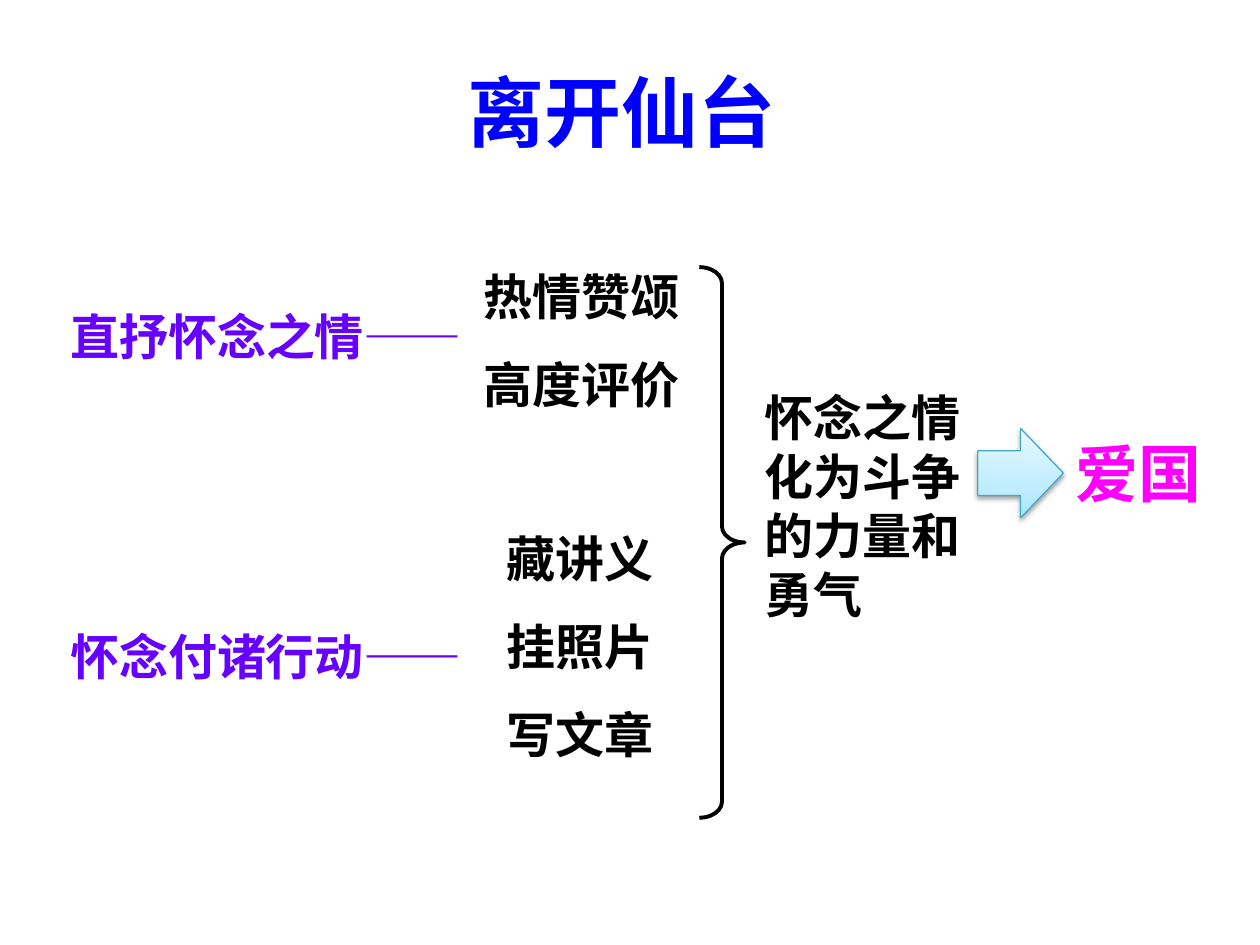
from lxml import etree
from pptx import Presentation
from pptx.dml.color import RGBColor
from pptx.enum.shapes import MSO_SHAPE
from pptx.enum.text import MSO_ANCHOR, PP_ALIGN
from pptx.oxml.ns import qn
from pptx.util import Inches, Pt

BRACE, ARROW = MSO_SHAPE.LEFT_BRACE, MSO_SHAPE.RIGHT_ARROW
TOP = MSO_ANCHOR.TOP
LEFT, CENTER = PP_ALIGN.LEFT, PP_ALIGN.CENTER

THEME = {
    "latin": "Arial", "cjk": "Noto Sans CJK SC",
    "title": {"size": 44, "color": "0000FF"},
    "label": {"size": 28, "color": "6600FF"},
    "body": {"size": 28, "color": "000000"},
    "result": {"size": 36, "color": "FF00FF"},
    "arrow_line": "46AAC5",
    "arrow_stops": [(0, "A7E6FF"), (35, "C1EDFF"), (100, "E7F8FF")],
}

TITLE = ("离开仙台", (2.19, 0.46, 5.49, 0.84))
DASH = "——"
LABELS = [  # text, bold dash, box
    ("直抒怀念之情", False, (0.46, 2.38, 3.38, 0.57)),
    ("怀念付诸行动", True, (0.46, 4.92, 3.46, 0.57)),
]
DETAILS = [
    (["热情赞颂", "高度评价"], (3.74, 1.83, 1.9, 1.51)),
    (["藏讲义", "挂照片", "写文章"], (3.92, 3.91, 1.81, 2.22)),
]
SUMMARY = ("怀念之情化为斗争的力量和勇气", (5.97, 3.03, 1.8, 1.99))
RESULT = ("爱国", (8.44, 3.4, 1.51, 0.71))
BRACE_BOX = (5.55, 2.12, 0.36, 4.37)
ARROW_BOX = (7.76, 3.4, 0.68, 0.71)


def inches(box):
    return [Inches(v) for v in box]


def add_run(p, text, style, bold=True, latin=THEME["latin"]):
    r = p.add_run()
    r.text = text
    for name, value in {"size": Pt(style["size"]), "bold": bold, "name": latin}.items():
        setattr(r.font, name, value)
    r.font.color.rgb = RGBColor.from_string(style["color"])
    latin_el = r.font._element.find(qn("a:latin"))
    ea = etree.Element(qn("a:ea"), typeface=THEME["cjk"])
    latin_el.addnext(ea)


def write(sp, lines, style, align=LEFT, spacing=1.0):
    tf = sp.text_frame
    tf.word_wrap = True
    tf.vertical_anchor = TOP
    for i, line in enumerate(lines):
        p = tf.paragraphs[0] if i == 0 else tf.add_paragraph()
        p.alignment, p.line_spacing = align, spacing
        add_run(p, line, style)
    return tf


def add_text(s, lines, box, style, **layout):
    return write(s.shapes.add_textbox(*inches(box)), lines, style, **layout)


def add_outline(s, kind, box, color, width):
    sp = s.shapes.add_shape(kind, *inches(box))
    sp.shadow.inherit = False
    sp.line.color.rgb = RGBColor.from_string(color)
    sp.line.width = Pt(width)
    return sp


def add_color(parent, color):
    return etree.SubElement(parent, qn("a:srgbClr"), val=color)


def shade_arrow(sp):
    """Give the arrow its upward three-stop gradient and soft drop shadow."""
    sp.fill.gradient()
    sp.fill.gradient_angle = 90
    stops = sp._element.spPr.find(".//" + qn("a:gsLst"))
    for old in list(stops):
        stops.remove(old)
    for pos, color in THEME["arrow_stops"]:
        add_color(etree.SubElement(stops, qn("a:gs"), pos=str(pos * 1000)), color)
    effects = sp._element.spPr.find(qn("a:effectLst"))
    shadow = etree.SubElement(effects, qn("a:outerShdw"), blurRad=str(Pt(3.1)),
                              dist=str(Pt(1.6)), dir="5400000", rotWithShape="0")
    etree.SubElement(add_color(shadow, "000000"), qn("a:alpha"), val="38000")


def main():
    prs = Presentation()
    prs.slide_width, prs.slide_height = Inches(10), Inches(7.5)
    s = prs.slides.add_slide(prs.slide_layouts[5])

    text, box = TITLE
    title = s.shapes.title
    title.left, title.top, title.width, title.height = inches(box)
    write(title, [text], THEME["title"], align=CENTER)

    for text, bold_dash, box in LABELS:
        tf = add_text(s, [text], box, THEME["label"])
        add_run(tf.paragraphs[0], DASH, THEME["label"], bold_dash, THEME["cjk"])
    for lines, box in DETAILS:
        add_text(s, lines, box, THEME["body"], spacing=1.5)

    brace = add_outline(s, BRACE, BRACE_BOX, THEME["body"]["color"], 2.25)
    brace.fill.background()
    brace.rotation = 180
    brace.adjustments[0] = 0.355

    text, box = SUMMARY
    add_text(s, [text], box, THEME["body"])
    shade_arrow(add_outline(s, ARROW, ARROW_BOX, THEME["arrow_line"], 0.75))
    text, box = RESULT
    add_text(s, [text], box, THEME["result"])

    prs.save("out.pptx")


if __name__ == "__main__":
    main()
